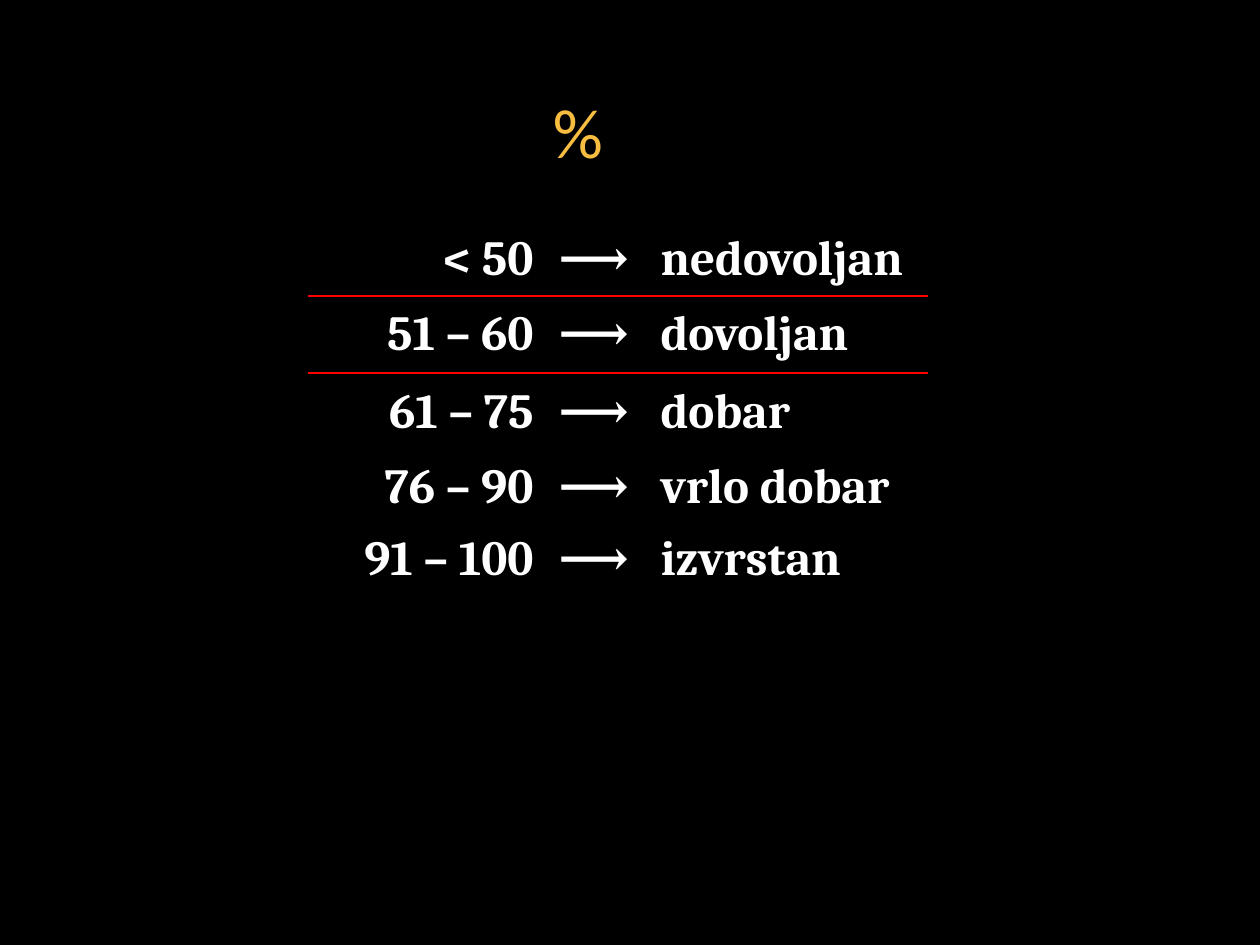
from lxml import etree
from pptx import Presentation
from pptx import util as u
from pptx.dml.color import RGBColor
from pptx.enum import text
from pptx.oxml import parse_xml
from pptx.oxml.ns import nsdecls, qn

PX = 914400 // 126
BLACK = RGBColor(0x00, 0x00, 0x00)
WHITE = RGBColor(0xFF, 0xFF, 0xFF)
GOLD = RGBColor(0xF7, 0xBD, 0x40)
RED = RGBColor(0xFF, 0x00, 0x00)
NO_GRID_STYLE = "{2D5ABB26-0587-4C30-8999-92F81FD0307C}"

GRADES = [
    ("< 50", "nedovoljan"),
    ("51 – 60", "dovoljan"),
    ("61 – 75", "dobar"),
    ("76 – 90", "vrlo dobar"),
    ("91 – 100", "izvrstan"),
]
COLUMN_WIDTHS = [238, 382]
ROW_HEIGHTS = [72, 77, 79, 72, 72]
GRADE_INDENT = 102


def add_run(paragraph, content, font, size, color, bold=False):
    run = paragraph.add_run()
    run.text = content
    run.font.name = font
    run.font.size = u.Pt(size)
    run.font.color.rgb = color
    run.font.bold = bold


def set_border(cell, side):
    """Draw a thin red line on one side of the cell: "T" or "B"."""
    line = parse_xml(
        f'<a:ln{side} {nsdecls("a")} w="{u.Pt(1)}"><a:solidFill>'
        f'<a:srgbClr val="{RED}"/></a:solidFill></a:ln{side}>'
    )
    cell._tc.get_or_add_tcPr().insert(0, line)


presentation = Presentation()
presentation.slide_width = 1260 * PX
presentation.slide_height = 945 * PX
slide = presentation.slides.add_slide(presentation.slide_layouts[6])
slide.background.fill.solid()
slide.background.fill.fore_color.rgb = BLACK

# Title
title = slide.shapes.add_textbox(49 * PX, 32 * PX, 1058 * PX, 147 * PX)
title.text_frame.word_wrap = True
title.text_frame.vertical_anchor = text.MSO_ANCHOR.BOTTOM
paragraph = title.text_frame.paragraphs[0]
paragraph.alignment = text.PP_ALIGN.CENTER
paragraph.space_before = u.Pt(4)
add_run(paragraph, "%", "Calibri", 40, GOLD)

# Grade table
frame = slide.shapes.add_table(
    len(GRADES), 2, 308 * PX, 224 * PX,
    sum(COLUMN_WIDTHS) * PX, sum(ROW_HEIGHTS) * PX,
)
table = frame.table
table.first_row = False
table.horz_banding = False
table._tbl.tblPr.find(qn("a:tableStyleId")).text = NO_GRID_STYLE
for column, width in zip(table.columns, COLUMN_WIDTHS):
    column.width = width * PX
for row, height in zip(table.rows, ROW_HEIGHTS):
    row.height = height * PX

for row_index, (percent, grade) in enumerate(GRADES):
    for column_index, content in enumerate((percent, f"⟶\t{grade}")):
        cell = table.cell(row_index, column_index)
        cell.fill.background()
        cell.vertical_anchor = text.MSO_ANCHOR.MIDDLE
        paragraph = cell.text_frame.paragraphs[0]
        if column_index == 0:
            paragraph.alignment = text.PP_ALIGN.RIGHT
        else:
            properties = paragraph._p.get_or_add_pPr()
            tabs = etree.SubElement(properties, qn("a:tabLst"))
            etree.SubElement(tabs, qn("a:tab"), pos=str(GRADE_INDENT * PX), algn="l")
        add_run(paragraph, content, "Cambria", 28, WHITE, bold=True)

# Line between the failing grade and the passing ones
for column_index in range(2):
    set_border(table.cell(0, column_index), "B")
    set_border(table.cell(1, column_index), "T")

presentation.save("out.pptx")
